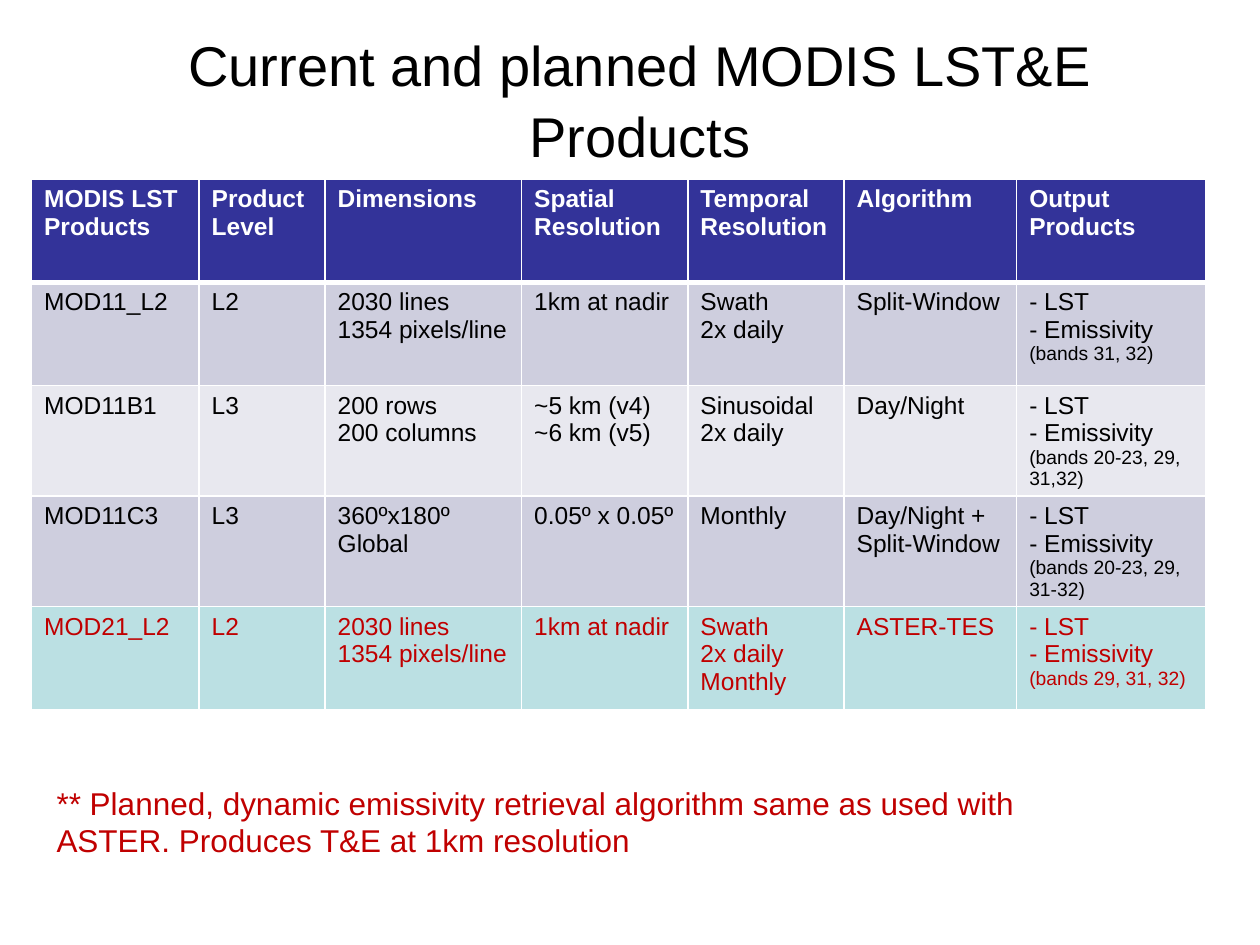
from lxml import etree
from pptx import Presentation
from pptx.dml.color import RGBColor
from pptx.enum.text import MSO_ANCHOR, MSO_AUTO_SIZE, PP_ALIGN
from pptx.oxml.ns import qn
from pptx.util import Inches, Pt

CENTER, LEFT = PP_ALIGN.CENTER, PP_ALIGN.LEFT
TOP = MSO_ANCHOR.TOP
FIT_SHAPE, FIT_NONE = MSO_AUTO_SIZE.SHAPE_TO_FIT_TEXT, MSO_AUTO_SIZE.NONE

WHITE, BLACK, RED = "FFFFFF", "000000", "C00000"
NAVY, LAVENDER, PALE, AQUA = "333399", "CECEDE", "E8E8EF", "BBE0E3"

TITLE = "Current and planned MODIS LST&E Products"
FOOTNOTE = ("** Planned, dynamic emissivity retrieval algorithm same as used with "
            "ASTER. Produces T&E at 1km resolution")

# A line break starts a new paragraph; the list of bands is set smaller.
BANDS = "(bands"
PRODUCTS = [
    ["MODIS LST Products", "Product Level", "Dimensions", "Spatial\nResolution",
     "Temporal Resolution", "Algorithm", "Output\nProducts"],
    ["MOD11_L2", "L2", "2030 lines\n1354 pixels/line", "1km at nadir",
     "Swath\n2x daily", "Split-Window", "- LST\n- Emissivity (bands 31, 32)"],
    ["MOD11B1", "L3", "200 rows\n200 columns", "~5 km (v4)\n~6 km (v5)",
     "Sinusoidal\n2x daily", "Day/Night",
     "- LST\n- Emissivity\n(bands 20-23, 29, 31,32)"],
    ["MOD11C3", "L3", "360ºx180º\nGlobal", "0.05º x 0.05º", "Monthly",
     "Day/Night + Split-Window", "- LST\n- Emissivity\n(bands 20-23, 29, 31-32)"],
    ["MOD21_L2", "L2", "2030 lines\n1354 pixels/line", "1km at nadir",
     "Swath\n2x daily\nMonthly", "ASTER-TES",
     "- LST\n- Emissivity\n(bands 29, 31, 32)"],
]
ROW_STYLES = [  # fill, text colour, bold
    (NAVY, WHITE, True),
    (LAVENDER, BLACK, False),
    (PALE, BLACK, False),
    (LAVENDER, BLACK, False),
    (AQUA, RED, False),
]
COLUMN_WIDTHS = [1.33, 1, 1.56, 1.32, 1.24, 1.37, 1.5]
ROW_HEIGHT = 0.82


def rgb(value):
    return RGBColor.from_string(value)


def add_run(paragraph, text, size, color, bold=False):
    run = paragraph.add_run()
    run.text = text
    for name, value in {"name": "Arial", "size": Pt(size), "bold": bold}.items():
        setattr(run.font, name, value)
    run.font.color.rgb = rgb(color)


def add_text(slide, text, box, size, color, align, autosize, line_spacing=None):
    frame = slide.shapes.add_textbox(*map(Inches, box)).text_frame
    settings = {"word_wrap": True, "auto_size": autosize, "vertical_anchor": TOP}
    for name, value in settings.items():
        setattr(frame, name, value)
    paragraph = frame.paragraphs[0]
    paragraph.alignment = align
    paragraph.line_spacing = line_spacing
    add_run(paragraph, text, size, color)


def add_borders(cell, widths):
    properties = cell._tc.get_or_add_tcPr()
    for side, width in widths.items():
        line = etree.SubElement(properties, qn(f"a:ln{side}"), w=str(Pt(width)))
        fill = etree.SubElement(line, qn("a:solidFill"))
        etree.SubElement(fill, qn("a:srgbClr"), val=WHITE)


def fill_cell(cell, text, fill, color, bold):
    frame = cell.text_frame
    for index, line in enumerate(text.split("\n")):
        paragraph = frame.add_paragraph() if index else frame.paragraphs[0]
        main, marker, bands = line.partition(BANDS)
        if main:
            add_run(paragraph, main, 14, color, bold)
        if marker:
            add_run(paragraph, marker + bands, 11, color, bold)
    cell.fill.solid()
    cell.fill.fore_color.rgb = rgb(fill)


def add_products(slide):
    table = slide.shapes.add_table(
        len(PRODUCTS), len(COLUMN_WIDTHS), Inches(0.25), Inches(1.42),
        Inches(sum(COLUMN_WIDTHS)), Inches(ROW_HEIGHT * len(PRODUCTS))).table
    for column, width in zip(table.columns, COLUMN_WIDTHS):
        column.width = Inches(width)
    for r, (product, style) in enumerate(zip(PRODUCTS, ROW_STYLES)):
        table.rows[r].height = Inches(ROW_HEIGHT)
        # The rule between header and body is heavier than the rest.
        widths = {"L": 1, "R": 1, "T": 3 if r == 1 else 1, "B": 3 if r == 0 else 1}
        for c, text in enumerate(product):
            add_borders(table.cell(r, c), widths)
            fill_cell(table.cell(r, c), text, *style)


def main():
    deck = Presentation()
    deck.slide_width, deck.slide_height = Inches(10), Inches(7.5)
    slide = deck.slides.add_slide(deck.slide_layouts[6])
    add_products(slide)
    add_text(slide, TITLE, (0.58, 0.17, 9, 1), 32, BLACK, CENTER, FIT_NONE, 1.05)
    add_text(slide, FOOTNOTE, (0.35, 6.17, 8.58, 0.71), 18, RED, LEFT, FIT_SHAPE)
    deck.save("out.pptx")


if __name__ == "__main__":
    main()
